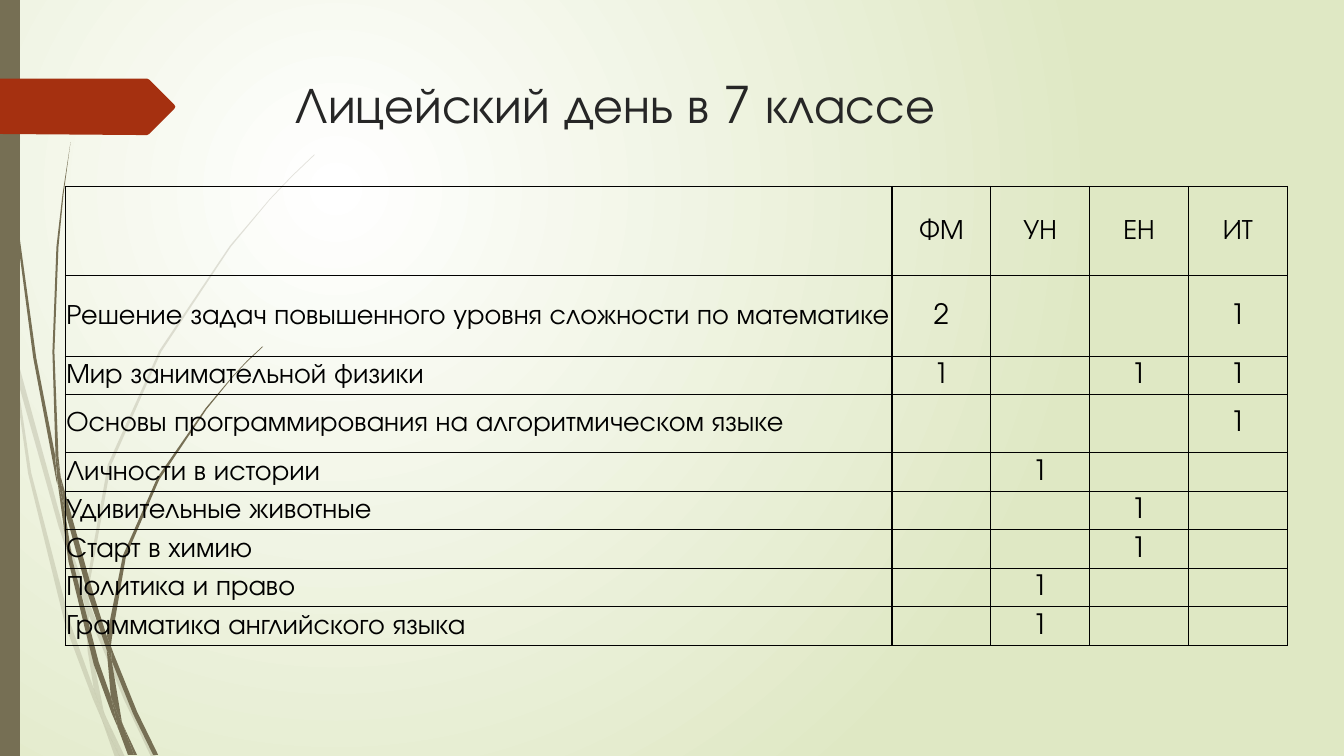
from dataclasses import dataclass
from typing import NamedTuple

from lxml import etree
from pptx import Presentation
from pptx.dml.color import RGBColor
from pptx.enum.shapes import MSO_SHAPE
from pptx.enum.text import MSO_ANCHOR, PP_ALIGN
from pptx.oxml.ns import qn
from pptx.util import Cm, Pt

RECTANGLE = MSO_SHAPE.RECTANGLE
TOP, MIDDLE = MSO_ANCHOR.TOP, MSO_ANCHOR.MIDDLE
LEFT, CENTER = PP_ALIGN.LEFT, PP_ALIGN.CENTER
GRID = Cm(2.54) / 100  # one step of the outline coordinates

Outline = list[tuple[int, int]]


@dataclass(frozen=True)
class Theme:
    font: str = "TeX Gyre Adventor"
    title_size: int = 36
    table_size: int = 20
    title: str = "262626"
    ink: str = "000000"
    stem: str = "766F54"
    banner: str = "A53010"
    glow: str = "FFFFFF"
    meadow: str = "DFE8C4"


class Grass(NamedTuple):
    opacity: int
    strands: list[Outline]


class Course(NamedTuple):
    name: str
    hours: tuple[str, str, str, str]
    height: float = 0.97


THEME = Theme()

PALE_GRASS = Grass(20, [
    [(11, 350), (9, 322), (0, 282), (0, 299), (10, 344)],
    [(58, 522), (84, 599), (85, 586), (62, 520), (14, 345), (17, 376)],
    [(92, 607), (88, 596), (88, 610), (123, 694), (150, 751), (155, 751), (127, 692)],
    [(119, 751), (124, 751), (105, 711)],
    [(93, 683), (70, 619), (31, 469), (17, 376), (11, 350), (28, 470), (65, 621),
     (92, 693), (101, 714), (99, 707)],
    [(84, 599), (87, 646), (93, 683), (96, 692), (105, 711), (103, 706), (91, 646),
     (88, 610), (88, 608)],
    [(88, 584), (110, 462), (160, 349), (229, 245), (268, 198), (290, 175), (312, 154),
     (312, 153), (289, 175), (268, 197), (228, 244), (158, 348), (107, 461), (85, 584),
     (85, 586), (88, 596)],
    [(101, 714), (114, 751), (119, 751)],
    [(88, 608), (88, 610), (88, 596), (85, 586), (84, 599)],
    [(96, 692), (93, 683), (99, 707), (101, 714), (119, 751), (105, 711)],
])

DARK_GRASS = Grass(100, [
    [(7, 110), (17, 233), (33, 355), (56, 477), (57, 481), (55, 457), (55, 453),
     (36, 355), (19, 232), (8, 109), (5, 48), (4, 0), (3, 0), (4, 48)],
    [(88, 592), (106, 645), (106, 633), (106, 631), (93, 590), (60, 472), (64, 505)],
    [(113, 649), (110, 641), (111, 656), (132, 708), (152, 749), (157, 749), (136, 706)],
    [(110, 691), (98, 657), (72, 556), (64, 505), (57, 477), (68, 557), (93, 659),
     (111, 708), (117, 722), (116, 717)],
    [(60, 472), (58, 453), (54, 349), (58, 245), (63, 193), (70, 141), (62, 193),
     (56, 245), (52, 349), (55, 449)],
    [(133, 749), (136, 749), (122, 719)],
    [(57, 477), (64, 505), (60, 472), (55, 449), (55, 453)],
    [(111, 633), (125, 552), (158, 476), (205, 406), (231, 374), (245, 359), (261, 344),
     (260, 344), (245, 358), (231, 373), (204, 405), (156, 474), (122, 551), (106, 631),
     (110, 641)],
    [(117, 722), (127, 749), (131, 749)],
    [(106, 645), (110, 691), (116, 706), (122, 719), (121, 716), (111, 656), (109, 651)],
    [(106, 645), (109, 651), (111, 656), (110, 641), (106, 631), (106, 633)],
    [(116, 706), (110, 691), (116, 717), (117, 722), (130, 749), (133, 749), (122, 719)],
])

BANNER: Outline = [(173, 108), (148, 133), (146, 134), (136, 134), (0, 133), (0, 78),
                   (146, 78), (148, 79), (173, 104), (174, 106)]

COURSES = [
    Course("", ("ФМ", "УН", "ЕН", "ИТ"), 2.25),
    Course("Решение задач повышенного уровня сложности по математике",
           ("2", "", "", "1"), 2.03),
    Course("Мир занимательной физики", ("1", "", "1", "1")),
    Course("Основы программирования на алгоритмическом языке", ("", "", "", "1"), 1.46),
    Course("Личности в истории", ("", "1", "", "")),
    Course("Удивительные животные", ("", "", "1", "")),
    Course("Старт в химию", ("", "", "1", "")),
    Course("Политика и право", ("", "1", "", "")),
    Course("Грамматика английского языка", ("", "1", "", "")),
]
COLUMN_WIDTHS = [20.83] + [2.49] * 4


def paint(shape, color: str) -> None:
    shape.shadow.inherit = False
    shape.fill.solid()
    shape.fill.fore_color.rgb = RGBColor.from_string(color)
    shape.line.fill.background()


def draw_outline(shapes, outline: Outline, color: str):
    builder = shapes.build_freeform(*outline[0], scale=GRID)
    builder.add_line_segments(outline[1:], close=True)
    shape = builder.convert_to_shape()
    paint(shape, color)
    return shape


def draw_grass(slide, grass: Grass) -> None:
    group = slide.shapes.add_group_shape()
    for outline in grass.strands:
        strand = draw_outline(group.shapes, outline, THEME.stem)
        if grass.opacity < 100:
            color = strand.fill._xPr.find(qn("a:solidFill"))[0]
            etree.SubElement(color, qn("a:alpha"), val=str(grass.opacity * 1000))


def write(frame, text: str, size: int, color: str, align=LEFT) -> None:
    paragraph = frame.paragraphs[0]
    paragraph.text = text
    paragraph.alignment = align
    paragraph.font.name = THEME.font
    paragraph.font.size = Pt(size)
    paragraph.font.color.rgb = RGBColor.from_string(color)


def draw_background(slide) -> None:
    fill = slide.background.fill
    fill.gradient()
    for stop, color in zip(fill.gradient_stops, (THEME.glow, THEME.meadow)):
        stop.color.rgb = RGBColor.from_string(color)
    gradient = slide._element.find(".//" + qn("a:gradFill"))
    gradient.remove(gradient.find(qn("a:lin")))
    circle = etree.SubElement(gradient, qn("a:path"), path="circle")
    etree.SubElement(circle, qn("a:fillToRect"), l="50000", t="50000", r="100000", b="100000")


def add_borders(cell) -> None:
    properties = cell._tc.get_or_add_tcPr()
    for side in ("lnL", "lnR", "lnT", "lnB"):
        border = etree.SubElement(properties, qn(f"a:{side}"), w=str(Pt(1)))
        solid = etree.SubElement(border, qn("a:solidFill"))
        etree.SubElement(solid, qn("a:srgbClr"), val=THEME.ink)


def draw_timetable(slide) -> None:
    timetable = slide.shapes.add_table(
        len(COURSES), len(COLUMN_WIDTHS), Cm(1.65), Cm(4.7), Cm(sum(COLUMN_WIDTHS)),
        Cm(sum(course.height for course in COURSES))).table
    timetable.first_row = timetable.horz_banding = False
    for column, width in zip(timetable.columns, COLUMN_WIDTHS):
        column.width = Cm(width)
    for row, course in zip(timetable.rows, COURSES):
        row.height = Cm(course.height)
        for index, (cell, text) in enumerate(zip(row.cells, (course.name, *course.hours))):
            cell.margin_left = cell.margin_right = cell.margin_top = Cm(0.02)
            cell.margin_bottom = 0
            cell.vertical_anchor = MIDDLE
            add_borders(cell)
            cell.fill.background()
            write(cell.text_frame, text, THEME.table_size, THEME.ink,
                  CENTER if index else LEFT)


def main() -> None:
    deck = Presentation()
    deck.slide_width, deck.slide_height = Cm(33.87), Cm(19.05)
    slide = deck.slides.add_slide(deck.slide_layouts[6])

    # Backdrop: glow, grass, side bar and banner
    draw_background(slide)
    for grass in (PALE_GRASS, DARK_GRASS):
        draw_grass(slide, grass)
    side_bar = slide.shapes.add_shape(RECTANGLE, 0, 0, Cm(0.5), deck.slide_height)
    paint(side_bar, THEME.stem)
    draw_outline(slide.shapes, BANNER, THEME.banner)

    # Title
    heading = slide.shapes.add_textbox(Cm(7.21), Cm(1.73), Cm(24.77), Cm(3.56)).text_frame
    heading.word_wrap = True
    heading.vertical_anchor = TOP
    write(heading, "Лицейский день в 7 классе", THEME.title_size, THEME.title)

    # Hours per course and profile
    draw_timetable(slide)
    deck.save("out.pptx")


if __name__ == "__main__":
    main()
